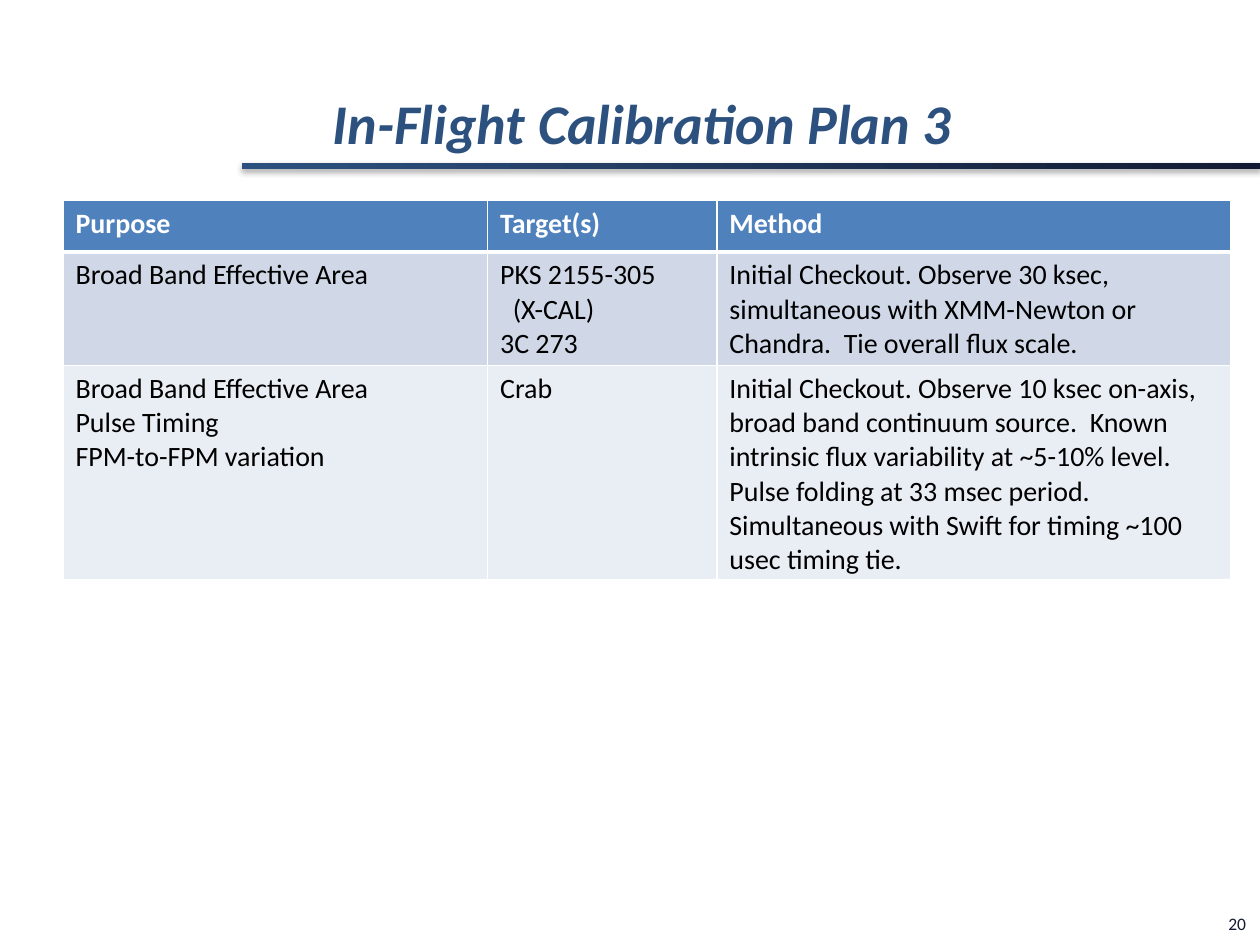
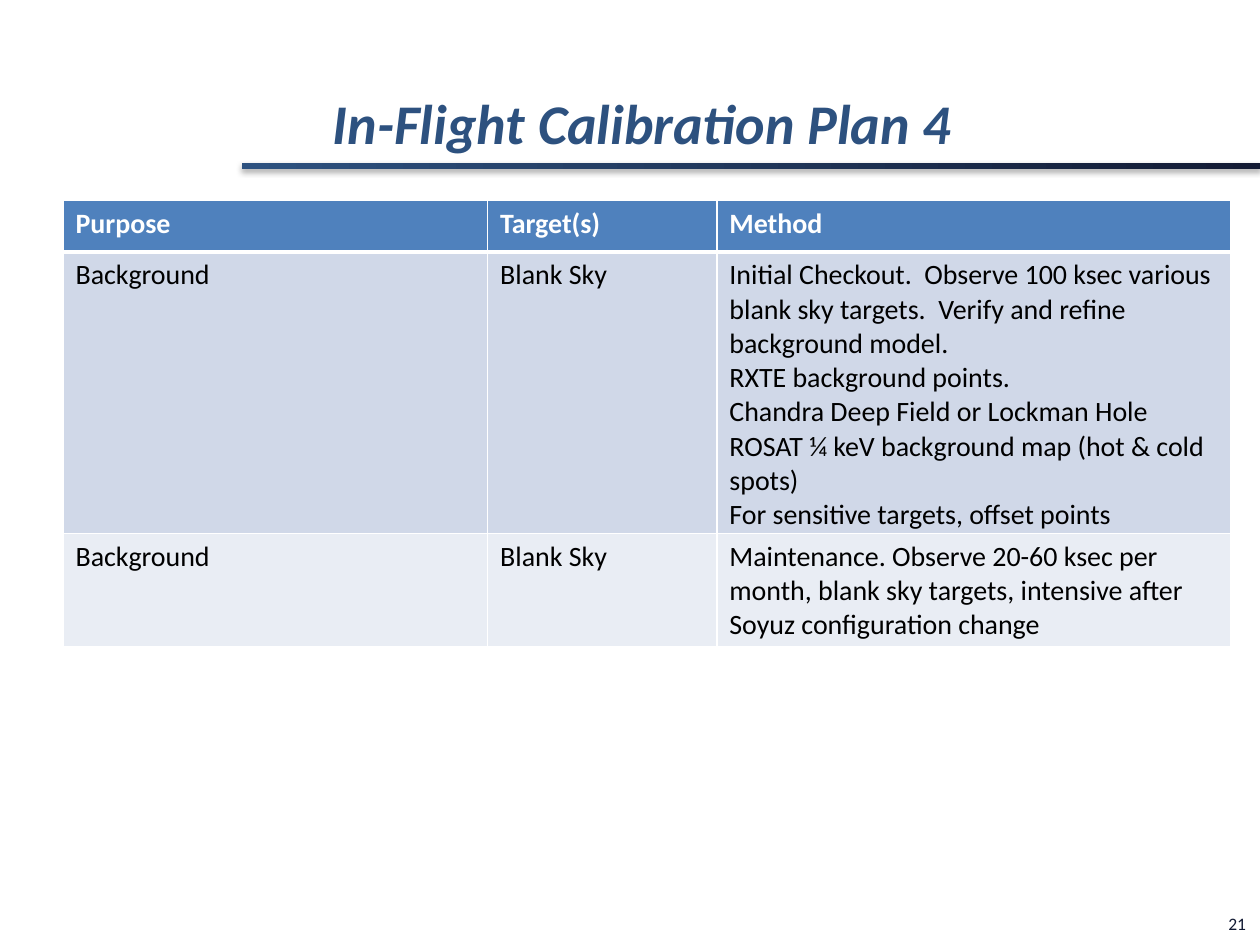
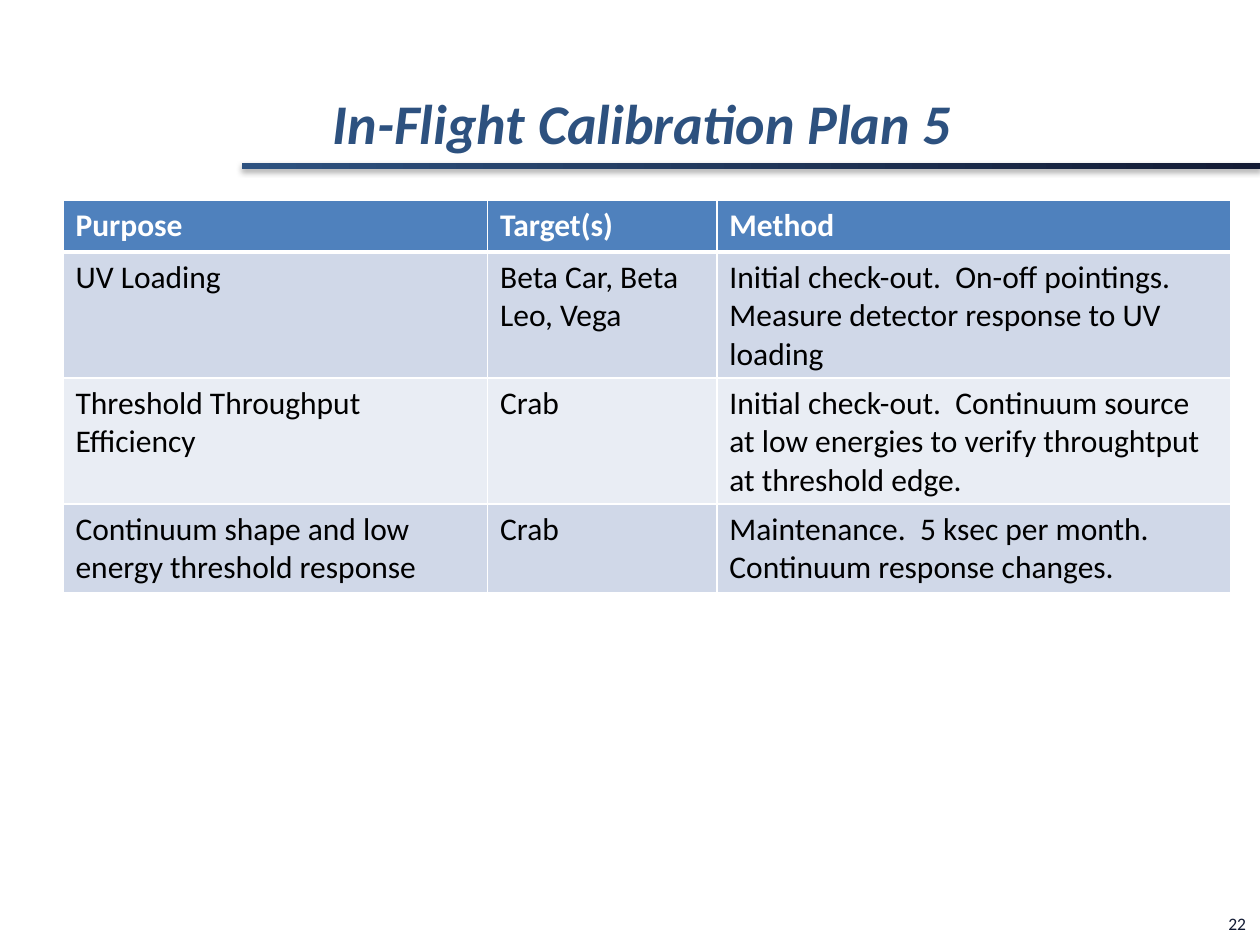
from lxml import etree
from pptx import Presentation
from pptx.dml.color import RGBColor
from pptx.enum.shapes import MSO_SHAPE
from pptx.enum.text import MSO_ANCHOR, MSO_AUTO_SIZE, PP_ALIGN
from pptx.oxml import parse_xml
from pptx.oxml.ns import nsdecls, qn
from pptx.util import Inches, Pt

RECTANGLE = MSO_SHAPE.RECTANGLE
BOTTOM = MSO_ANCHOR.BOTTOM
LEFT = PP_ALIGN.LEFT
NO_AUTOFIT = MSO_AUTO_SIZE.NONE
GROW = MSO_AUTO_SIZE.SHAPE_TO_FIT_TEXT

SLIDE_WIDTH, SLIDE_HEIGHT = Inches(10), Inches(7.5)
GRID_COLUMNS, GRID_ROWS = 100, 75
TITLE_ONLY = 5
FONT = "Calibri"
COLORS = {
    "title": "2D517F", "dark": "121A33", "white": "FFFFFF", "text": "000000",
    "header": "4F81BD", "odd": "D0D8E8", "even": "E9EDF4",
}
TITLE_BOX = (25.4, 5.9, 69.6, 7)
BAND_BOX = (19.2, 12.9, 80.8, 0.5)
NUMBER_BOX = (96.5, 72, 3.5, 2.7)
TABLE_LEFT, TABLE_TOP = 5, 15.9
TABLE_COLUMNS = (33.7, 18.2, 40.8)
ROW_HEIGHT = 4.1
FIRST_NUMBER = 20
HEADINGS = ("Purpose", "Target(s)", "Method")
INDENTED_LINES = ("(X-CAL)",)

PLANS = [
    {"title": "In-Flight Calibration Plan 3", "size": 16, "height": 30.1, "rows": [
        ("Broad Band Effective Area",
         "PKS 2155-305\n(X-CAL)\n3C 273",
         "Initial Checkout. Observe 30 ksec, simultaneous with XMM-Newton or "
         "Chandra.  Tie overall flux scale."),
        ("Broad Band Effective Area\nPulse Timing\nFPM-to-FPM variation",
         "Crab",
         "Initial Checkout. Observe 10 ksec on-axis, broad band continuum source.  "
         "Known intrinsic flux variability at ~5-10% level. "
         "Pulse folding at 33 msec period.\n"
         "Simultaneous with Swift for timing ~100 usec timing tie."),
    ]},
    {"title": "In-Flight Calibration Plan 4", "size": 16, "height": 35.4, "rows": [
        ("Background",
         "Blank Sky",
         "Initial Checkout.  Observe 100 ksec various blank sky targets.  "
         "Verify and refine background model.\n"
         "RXTE background points.\n"
         "Chandra Deep Field or Lockman Hole\n"
         "ROSAT ¼ keV background map (hot & cold spots)\n"
         "For sensitive targets, offset points"),
        ("Background",
         "Blank Sky",
         "Maintenance. Observe 20-60 ksec per month, blank sky targets, "
         "intensive after Soyuz configuration change"),
    ]},
    {"title": "In-Flight Calibration Plan 5", "size": 18, "height": 31.1, "rows": [
        ("UV Loading",
         "Beta Car, Beta Leo, Vega",
         "Initial check-out.  On-off pointings. "
         "Measure detector response to UV loading"),
        ("Threshold Throughput Efficiency",
         "Crab",
         "Initial check-out.  Continuum source at low energies to verify "
         "throughtput at threshold edge."),
        ("Continuum shape and low energy threshold response",
         "Crab",
         "Maintenance.  5 ksec per month.  Continuum response changes."),
    ]},
]


def color(name):
    """Return a palette colour."""
    return RGBColor.from_string(COLORS[name])


def across(columns):
    """Turn grid columns into a length."""
    return round(SLIDE_WIDTH * columns / GRID_COLUMNS)


def down(rows):
    """Turn grid rows into a length."""
    return round(SLIDE_HEIGHT * rows / GRID_ROWS)


def place(box):
    """Turn a grid box into left, top, width and height."""
    left, top, width, height = box
    return across(left), down(top), across(width), down(height)


def set_font(paragraph, size, color_name, bold=False, italic=False):
    """Format a whole paragraph."""
    font = paragraph.font
    font.name, font.size = FONT, Pt(size)
    font.bold, font.italic = bold, italic
    font.color.rgb = color(color_name)


def add_title(slide, box, text):
    """Fill and format the title placeholder."""
    title = slide.shapes.title
    title.left, title.top, title.width, title.height = place(box)
    frame = title.text_frame
    frame.text = text
    frame.word_wrap = True
    frame.auto_size = NO_AUTOFIT
    frame.vertical_anchor = BOTTOM
    paragraph = frame.paragraphs[0]
    paragraph.alignment = LEFT
    set_font(paragraph, 32, "title", bold=True, italic=True)


def add_band(slide, box):
    """Draw the gradient band with its soft shadow."""
    band = slide.shapes.add_shape(RECTANGLE, *place(box))
    band.line.fill.background()
    band.fill.gradient()
    band.fill.gradient_angle = 0
    for stop, name in zip(band.fill.gradient_stops, ("title", "dark")):
        stop.color.rgb = color(name)
    band.shadow.inherit = False
    effects = band.element.spPr.find(qn("a:effectLst"))
    effects.append(parse_xml(
        f'<a:outerShdw {nsdecls("a")} blurRad="{Pt(3.1)}" dist="{Pt(1.8)}" '
        f'dir="5400000" rotWithShape="0"><a:srgbClr val="{COLORS["text"]}">'
        '<a:alpha val="35000"/></a:srgbClr></a:outerShdw>'))


def add_number(slide, box, number):
    """Write the slide number in the corner."""
    frame = slide.shapes.add_textbox(*place(box)).text_frame
    frame.word_wrap = False
    frame.auto_size = GROW
    frame.text = str(number)
    set_font(frame.paragraphs[0], 10, "dark")


def add_borders(cell, bottom_width):
    """Give a cell white borders."""
    properties = cell._tc.get_or_add_tcPr()
    for side, width in (("L", 1), ("R", 1), ("T", 1), ("B", bottom_width)):
        line = etree.SubElement(properties, qn(f"a:ln{side}"), w=str(Pt(width)))
        fill = etree.SubElement(line, qn("a:solidFill"))
        etree.SubElement(fill, qn("a:srgbClr"), val=COLORS["white"])


def format_cell(cell, text, size, row_index):
    """Write a cell in the style of its row."""
    header = row_index == 0
    add_borders(cell, 3 if header else 1)
    fill_name = "header" if header else "odd" if row_index % 2 else "even"
    cell.fill.solid()
    cell.fill.fore_color.rgb = color(fill_name)
    cell.text = text
    for paragraph in cell.text_frame.paragraphs:
        if paragraph.text in INDENTED_LINES:
            paragraph._p.get_or_add_pPr().set("marL", str(across(1)))
        set_font(paragraph, size, "white" if header else "text", bold=header)


def add_plan_table(slide, box, rows, size):
    """Draw the table of purposes, targets and methods."""
    contents = [HEADINGS, *rows]
    frame = slide.shapes.add_table(len(contents), len(HEADINGS), *place(box))
    table = frame.table
    table.horz_banding = False
    for column, width in zip(table.columns, TABLE_COLUMNS):
        column.width = across(width)
    for row_index, texts in enumerate(contents):
        row = table.rows[row_index]
        row.height = down(ROW_HEIGHT)
        for cell, text in zip(row.cells, texts):
            format_cell(cell, text, size, row_index)
    frame.height = down(box[3])


def add_plan_slide(presentation, plan, number):
    """Build one calibration plan slide."""
    slide = presentation.slides.add_slide(presentation.slide_layouts[TITLE_ONLY])
    add_number(slide, NUMBER_BOX, number)
    add_band(slide, BAND_BOX)
    add_title(slide, TITLE_BOX, plan["title"])
    table_box = (TABLE_LEFT, TABLE_TOP, sum(TABLE_COLUMNS), plan["height"])
    add_plan_table(slide, table_box, plan["rows"], plan["size"])


def main():
    """Build and save the presentation."""
    presentation = Presentation()
    presentation.slide_width, presentation.slide_height = SLIDE_WIDTH, SLIDE_HEIGHT
    for number, plan in enumerate(PLANS, FIRST_NUMBER):
        add_plan_slide(presentation, plan, number)
    presentation.save("out.pptx")


if __name__ == "__main__":
    main()
